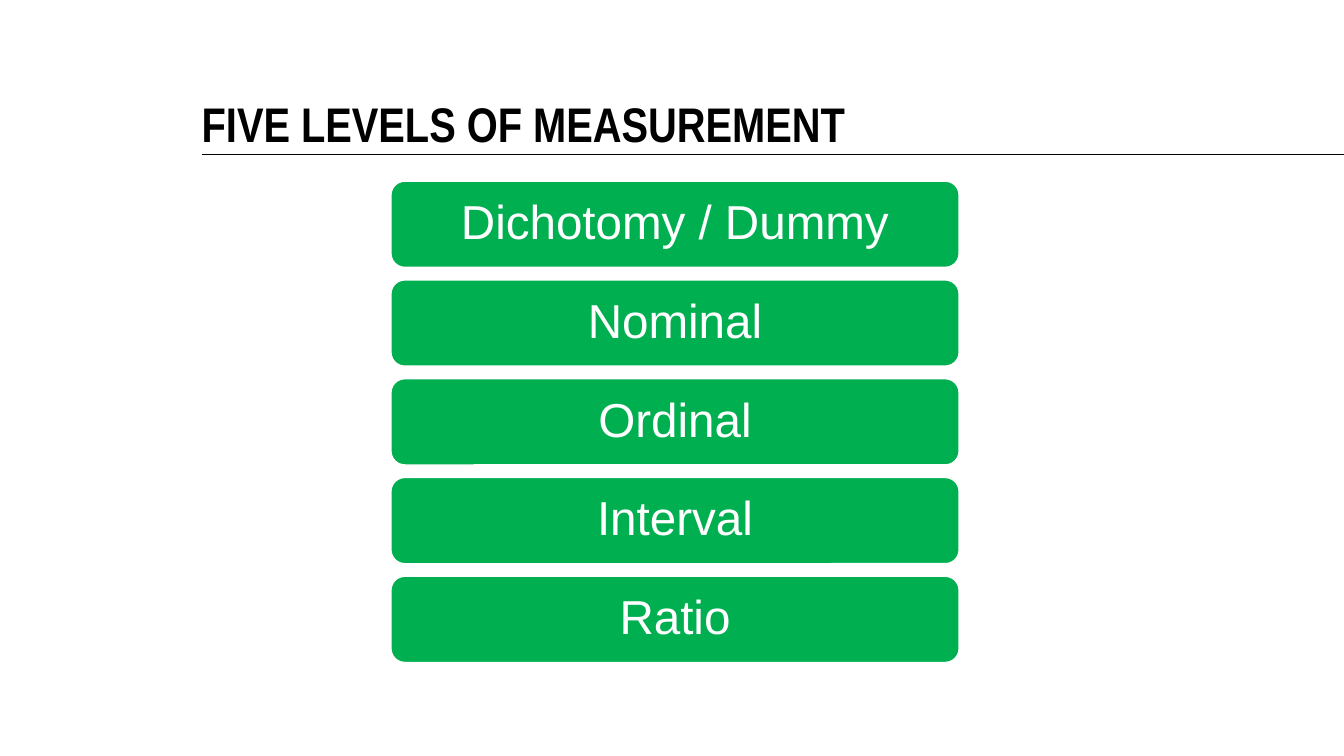
from dataclasses import dataclass

from lxml import etree
from pptx import Presentation
from pptx.dml.color import RGBColor
from pptx.enum import shapes, text
from pptx.oxml.ns import qn
from pptx.util import Inches, Pt

# Content
TITLE = "FIVE LEVELS OF MEASUREMENT"
LEVELS = ["Dichotomy / Dummy", "Nominal", "Ordinal", "Interval", "Ratio"]


@dataclass(frozen=True)
class Theme:
    ink: RGBColor = RGBColor(0, 0, 0)
    paper: RGBColor = RGBColor(255, 255, 255)
    green: RGBColor = RGBColor(0x00, 0xB0, 0x50)
    title_font: str = "Arial Narrow"
    body_font: str = "Arial"
    title_size: float = 34.7
    level_size: float = 34


THEME = Theme()

# Grid in inches: one column, one row for each level
WIDTH, HEIGHT = 13.33, 7.5
MARGIN, RULE_Y = 2, 1.53
TITLE_TOP, TITLE_W, TITLE_H = 0.71, 10.92, 0.8
BAR_LEFT, BAR_W, BAR_H = 3.87, 5.65, 0.87
FIRST_ROW, ROW_PITCH = 1.79, 0.98


def write(s, words, *, font, size, color, bold=False, inset=0, spacing=1.0,
          align=text.PP_ALIGN.LEFT, anchor=text.MSO_ANCHOR.MIDDLE):
    tf = s.text_frame
    tf.word_wrap = True
    tf.vertical_anchor = anchor
    tf.margin_left = tf.margin_right = Inches(inset)
    tf.margin_top = tf.margin_bottom = Inches(inset)
    p = tf.paragraphs[0]
    p.alignment = align
    p.line_spacing = spacing
    r = p.add_run()
    r.text = words
    r.font.name, r.font.size, r.font.bold = font, Pt(size), bold
    r.font.color.rgb = color


prs = Presentation()
prs.slide_width, prs.slide_height = Inches(WIDTH), Inches(HEIGHT)
slide = prs.slides.add_slide(prs.slide_layouts[6])

# Rule under the title, running to the right edge
rule = slide.shapes.add_connector(
    shapes.MSO_CONNECTOR.STRAIGHT,
    Inches(MARGIN), Inches(RULE_Y), Inches(WIDTH), Inches(RULE_Y))
rule.line.color.rgb = THEME.ink
rule.line.width = Pt(1)
etree.SubElement(rule.element.spPr, qn("a:effectLst"))

# Title
title = slide.shapes.add_textbox(
    Inches(MARGIN), Inches(TITLE_TOP), Inches(TITLE_W), Inches(TITLE_H))
write(title, TITLE, font=THEME.title_font, size=THEME.title_size,
      color=THEME.ink, bold=True, spacing=Pt(33.3),
      anchor=text.MSO_ANCHOR.BOTTOM)

# One bar for each level
for row, level in enumerate(LEVELS):
    bar = slide.shapes.add_shape(
        shapes.MSO_SHAPE.ROUNDED_RECTANGLE,
        Inches(BAR_LEFT), Inches(FIRST_ROW + row * ROW_PITCH),
        Inches(BAR_W), Inches(BAR_H))
    bar.shadow.inherit = False
    bar.fill.solid()
    bar.fill.fore_color.rgb = THEME.green
    bar.line.color.rgb = THEME.paper
    bar.line.width = Pt(2)
    write(bar, level, font=THEME.body_font, size=THEME.level_size,
          color=THEME.paper, inset=0.14, spacing=0.9,
          align=text.PP_ALIGN.CENTER)

prs.save("out.pptx")
